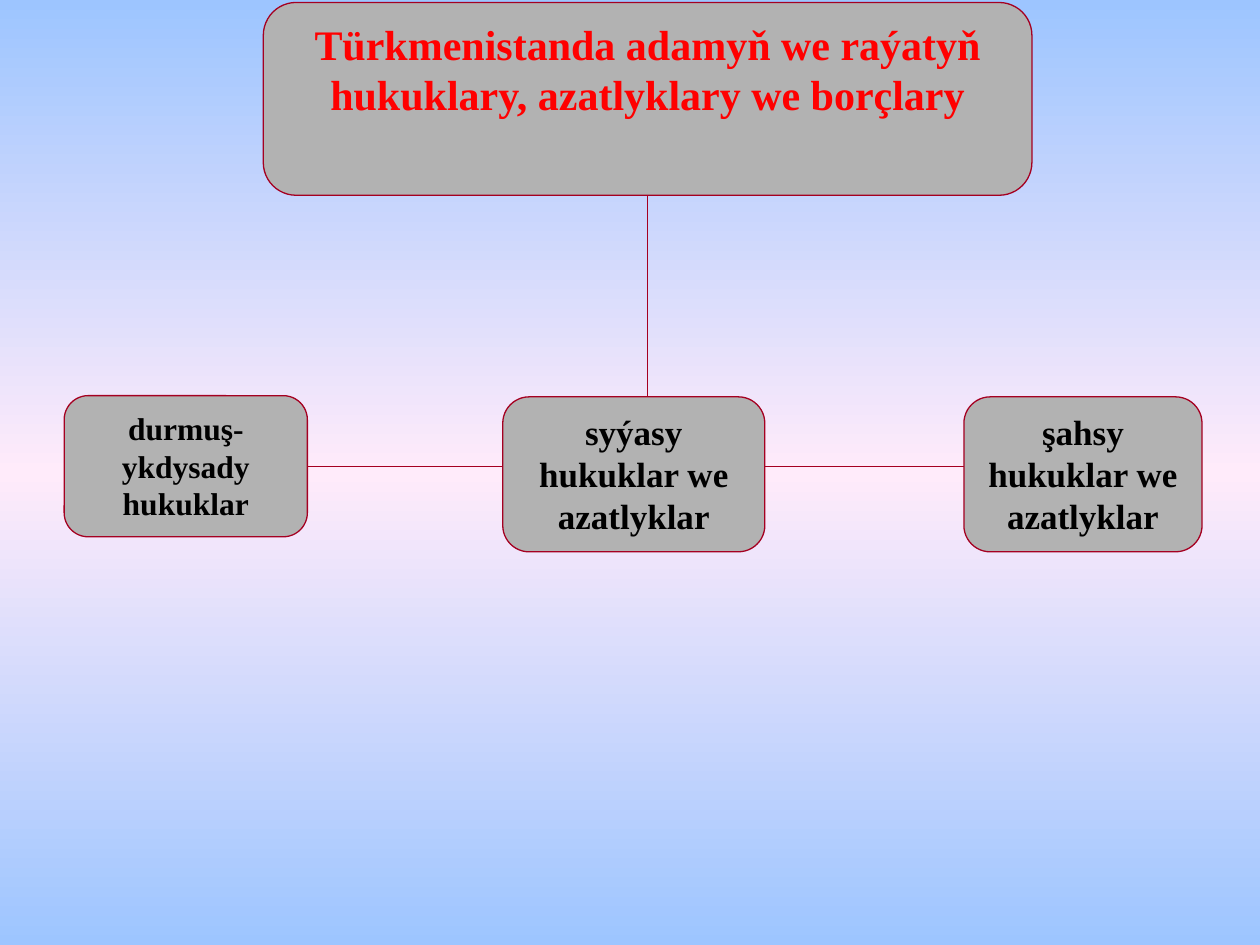
from copy import deepcopy

from lxml import etree
from pptx import Presentation
from pptx.dml.color import RGBColor
from pptx.enum.shapes import MSO_CONNECTOR, MSO_SHAPE
from pptx.enum.text import MSO_ANCHOR, PP_ALIGN
from pptx.oxml.ns import qn
from pptx.util import Inches, Pt

ROUNDED = MSO_SHAPE.ROUNDED_RECTANGLE
STRAIGHT = MSO_CONNECTOR.STRAIGHT
CENTER = PP_ALIGN.CENTER
TOP = MSO_ANCHOR.TOP

COLS, ROWS = 100, 75
TITLE = (20.9, 0.2, 61, 15.3)
BRANCHES = [
    ("durmuş-ykdysady hukuklar", (5.1, 31.4, 19.3, 11.2), 18),
    ("syýasy hukuklar we azatlyklar", (39.9, 31.5, 20.8, 12.3), 20),
    ("şahsy hukuklar we azatlyklar", (76.5, 31.5, 18.9, 12.3), 20),
]


def color(value):
    return RGBColor.from_string(value)


class Deck:
    font = "Times New Roman"
    box_fill = "B2B2B2"
    line_color = "A50021"
    line_width = 0.75

    def __init__(self):
        self.prs = Presentation()
        self.prs.slide_width, self.prs.slide_height = Inches(10), Inches(7.5)
        self.s = self.prs.slides.add_slide(self.prs.slide_layouts[6])

    def grid(self, *values):
        sizes = (self.prs.slide_width / COLS, self.prs.slide_height / ROWS)
        return [round(v * sizes[i % 2]) for i, v in enumerate(values)]

    def background(self, edge, middle):
        fill = self.s.background.fill
        fill.gradient()
        fill.gradient_angle = 270
        first = self.s.element.find(".//" + qn("a:gs"))
        center = deepcopy(first)
        center.set("pos", "50000")
        first.addnext(center)
        for stop, value in zip(fill.gradient_stops, (edge, middle, edge)):
            stop.color.rgb = color(value)

    def outline(self, line):
        line.color.rgb = color(self.line_color)
        line.width = Pt(self.line_width)

    def line(self, x1, y1, x2, y2):
        sp = self.s.shapes.add_connector(STRAIGHT, *self.grid(x1, y1, x2, y2))
        self.outline(sp.line)
        etree.SubElement(sp.element.spPr, qn("a:effectLst"))

    def box(self, text, area, size, text_color="000000"):
        sp = self.s.shapes.add_shape(ROUNDED, *self.grid(*area))
        sp.adjustments[0] = 0.17
        sp.shadow.inherit = False
        sp.fill.solid()
        sp.fill.fore_color.rgb = color(self.box_fill)
        self.outline(sp.line)
        tf = sp.text_frame
        tf.word_wrap = True
        tf.vertical_anchor = TOP
        p = tf.paragraphs[0]
        p.alignment = CENTER
        r = p.add_run()
        r.text = text
        for name, value in {"name": self.font, "size": Pt(size), "bold": True}.items():
            setattr(r.font, name, value)
        r.font.color.rgb = color(text_color)


def main():
    deck = Deck()
    deck.background("9DC5FF", "FFEBFA")
    left, top, width, height = TITLE
    axis = left + width / 2
    deck.line(axis, top + height, axis, BRANCHES[1][1][1])
    deck.line(23, 37, BRANCHES[-1][1][0], 37)
    deck.box("Türkmenistanda adamyň we raýatyň hukuklary, azatlyklary we borçlary",
             TITLE, 24, "FF0000")
    for text, area, size in BRANCHES:
        deck.box(text, area, size)
    deck.prs.save("out.pptx")


if __name__ == "__main__":
    main()
